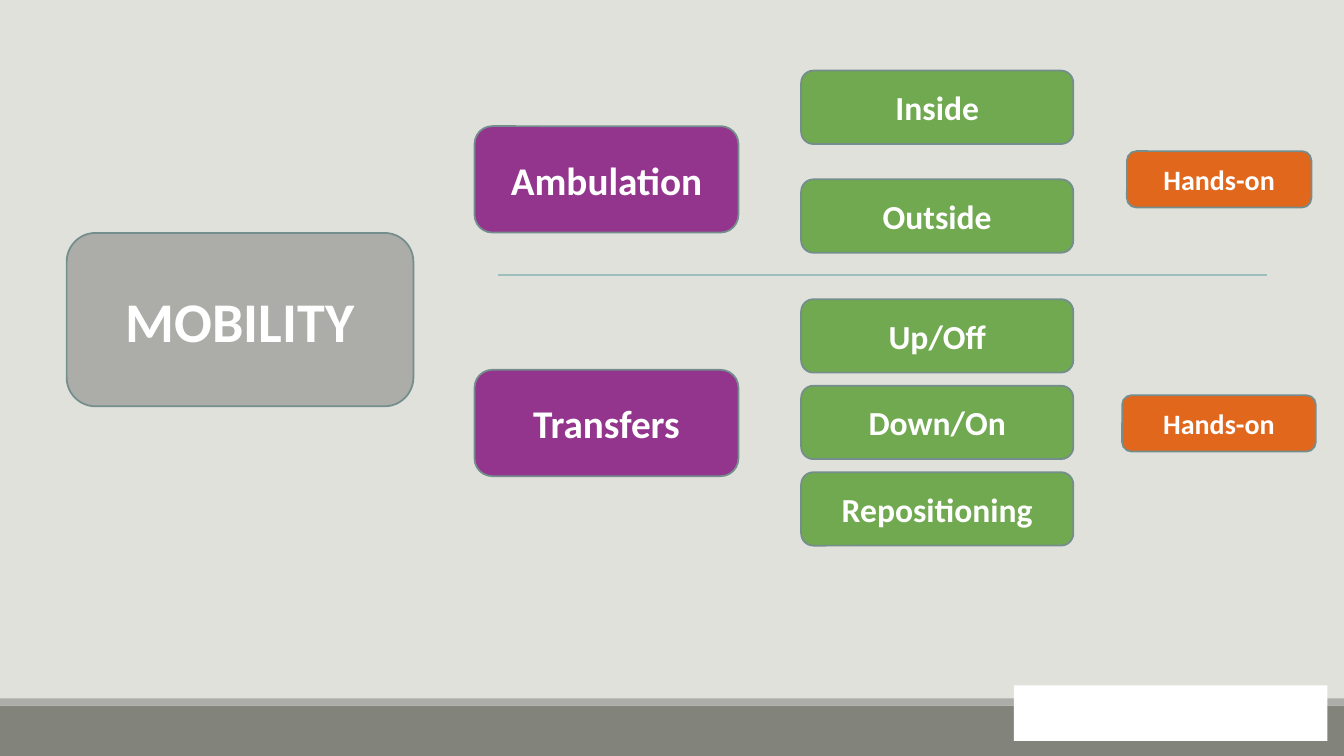
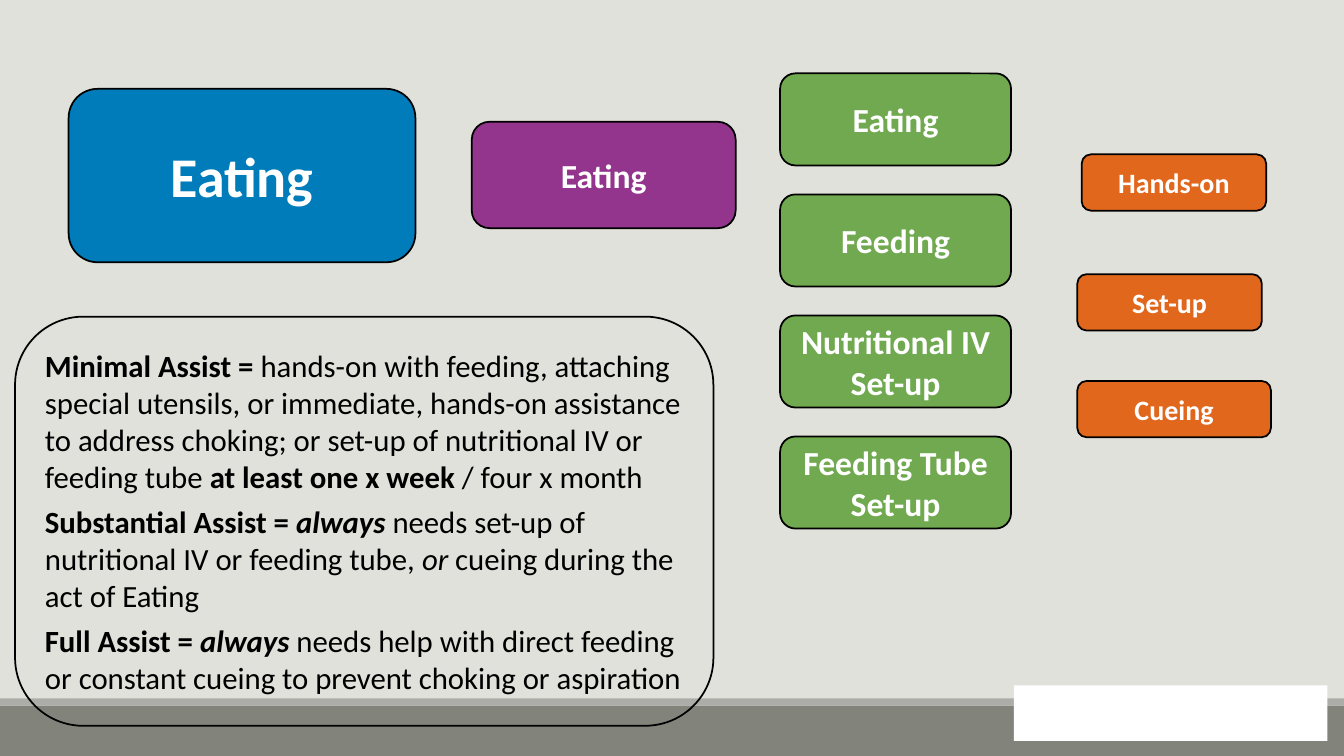
from pptx import Presentation
from pptx.dml.color import RGBColor
from pptx.enum.shapes import MSO_CONNECTOR, MSO_SHAPE
from pptx.enum.text import MSO_ANCHOR, PP_ALIGN
from pptx.oxml.ns import qn
from pptx.util import Cm, Pt
from lxml import etree

RECTANGLE = MSO_SHAPE.RECTANGLE
ROUNDED = MSO_SHAPE.ROUNDED_RECTANGLE
STRAIGHT = MSO_CONNECTOR.STRAIGHT
MIDDLE = MSO_ANCHOR.MIDDLE
CENTER, LEFT = PP_ALIGN.CENTER, PP_ALIGN.LEFT

FONT = "Calibri"
COLORS = {
    "background": "E1E1DB",
    "footer": "82847C",
    "gray": "ACADA8",
    "white": "FFFFFF",
    "black": "000000",
    "blue": "007CBA",
    "purple": "93358D",
    "green": "70A94F",
    "orange": "E1671D",
    "outline": "748D8D",
    "divider": "9DBFBE",
}

# Box sizes in centimetres: width, height
DOMAIN_SIZE = (8.74, 4.37)
ACTIVITY_SIZE = (6.65, 2.68)
HELP_SIZE = (4.65, 1.42)
WIDE_HELP_SIZE = (4.88, 1.42)


def color(name):
    return RGBColor.from_string(COLORS[name])


def add_text(paragraph, text, size=24, fill="white", bold=False, italic=False):
    run = paragraph.add_run()
    run.text = text
    font = run.font
    font.name, font.size = FONT, Pt(size)
    font.bold, font.italic = bold, italic
    font.color.rgb = color(fill)


class Deck:
    """Holds the shared style and the current slide."""

    def __init__(self):
        self.presentation = Presentation()
        self.presentation.slide_width = Cm(33.87)
        self.presentation.slide_height = Cm(19.05)
        background = self.presentation.slide_master.background.fill
        background.solid()
        background.fore_color.rgb = color("background")
        self.slide = None
        self.outline = "outline"

    def new_slide(self, outline):
        layout = self.presentation.slide_layouts[6]
        self.slide = self.presentation.slides.add_slide(layout)
        self.outline = outline
        # Footer bands and white panel
        self.shape(RECTANGLE, 0, 17.78, (33.87, 1.27), "footer")
        self.shape(RECTANGLE, 0, 17.6, (33.87, 0.18), "gray")
        self.shape(RECTANGLE, 25.55, 17.27, (7.9, 1.4), "white")

    def shape(self, kind, left, top, size, fill=None, outline=None):
        width, height = size
        shape = self.slide.shapes.add_shape(
            kind, Cm(left), Cm(top), Cm(width), Cm(height))
        shape.shadow.inherit = False
        if fill:
            shape.fill.solid()
            shape.fill.fore_color.rgb = color(fill)
        else:
            shape.fill.background()
        if outline:
            shape.line.color.rgb = color(outline)
            shape.line.width = Pt(1.25)
        else:
            shape.line.fill.background()
        return shape

    def box(self, text, left, top, size, fill, font_size=24):
        shape = self.shape(ROUNDED, left, top, size, fill, self.outline)
        frame = shape.text_frame
        frame.word_wrap, frame.vertical_anchor = True, MIDDLE
        paragraph = frame.paragraphs[0]
        paragraph.alignment = CENTER
        add_text(paragraph, text, size=font_size, bold=True)

    def column(self, labels, left, top, step, size, fill):
        for index, label in enumerate(labels):
            self.box(label, left, top + index * step, size, fill)

    def definitions(self, entries, left, top, size):
        frame = self.shape(ROUNDED, left, top, size,
                           outline=self.outline).text_frame
        frame.word_wrap, frame.vertical_anchor = True, MIDDLE
        for index, runs in enumerate(entries):
            paragraph = frame.add_paragraph() if index else frame.paragraphs[0]
            paragraph.alignment = LEFT
            if index < len(entries) - 1:
                paragraph.space_after = Pt(6)
            for text, style in runs:
                add_text(paragraph, text, size=22, fill="black",
                         bold="b" in style, italic="i" in style)

    def divider(self, left, right, top):
        line = self.slide.shapes.add_connector(
            STRAIGHT, Cm(left), Cm(top), Cm(right), Cm(top))
        line.line.color.rgb = color("divider")
        line.line.width = Pt(1)
        etree.SubElement(line._element.spPr, qn("a:effectLst"))


def mobility_slide(deck):
    deck.new_slide(outline="outline")
    deck.box("MOBILITY", 1.68, 5.87, DOMAIN_SIZE, "gray", 40)

    # Activities and their tasks
    for label, top in (("Ambulation", 3.18), ("Transfers", 9.32)):
        deck.box(label, 11.96, top, ACTIVITY_SIZE, "purple", 28)
    task_size = (6.86, 1.85)
    deck.column(["Inside", "Outside"], 20.19, 1.78, 2.74, task_size, "green")
    deck.column(["Up/Off", "Down/On", "Repositioning"],
                20.19, 7.54, 2.18, task_size, "green")
    deck.divider(12.55, 31.93, 6.93)

    # Kinds of help
    deck.box("Hands-on", 28.4, 3.81, HELP_SIZE, "orange", 20)
    deck.box("Hands-on", 28.28, 9.96, WIDE_HELP_SIZE, "orange", 20)


def eating_slide(deck):
    deck.new_slide(outline="black")
    deck.box("Eating", 1.73, 2.24, DOMAIN_SIZE, "blue", 40)

    # Activity and its tasks
    deck.box("Eating", 11.89, 3.07, ACTIVITY_SIZE, "purple")
    deck.column(["Eating", "Feeding", "Nutritional IV Set-up",
                 "Feeding Tube Set-up"],
                19.66, 1.85, 3.05, (5.82, 2.32), "green")

    # Kinds of help
    deck.box("Hands-on", 27.26, 3.89, HELP_SIZE, "orange", 20)
    deck.box("Set-up", 27.15, 6.91, HELP_SIZE, "orange", 20)
    deck.box("Cueing", 27.15, 9.6, WIDE_HELP_SIZE, "orange", 20)

    # Levels of assistance
    deck.definitions([
        [("Minimal Assist = ", "b"),
         ("hands-on with feeding, attaching special utensils, or immediate, "
          "hands-on assistance to address choking; or set-up of nutritional "
          "IV or feeding tube ", ""),
         ("at least one x week ", "b"),
         ("/ four x month", "")],
        [("Substantial Assist = ", "b"),
         ("always", "bi"),
         (" needs set-up of nutritional IV or feeding tube, ", ""),
         ("or", "i"),
         (" cueing during the act of Eating", "")],
        [("Full Assist = ", "b"),
         ("always ", "bi"),
         ("needs help with direct feeding or constant cueing to prevent "
          "choking or aspiration", "")],
    ], 0.38, 7.98, (17.6, 10.31))


def main():
    deck = Deck()
    mobility_slide(deck)
    eating_slide(deck)
    deck.presentation.save("out.pptx")


if __name__ == "__main__":
    main()
